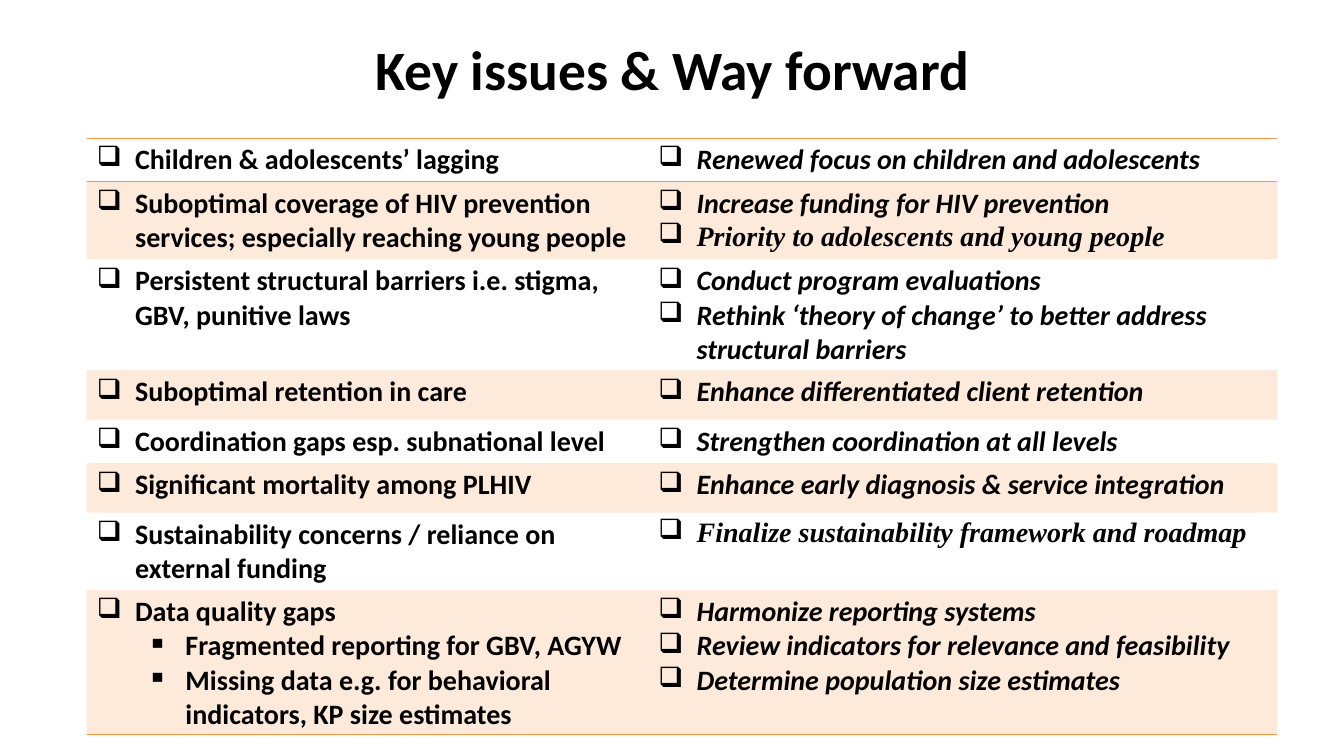
from lxml.etree import SubElement
from pptx import Presentation
from pptx.dml.color import RGBColor
from pptx.enum.text import MSO_ANCHOR, PP_ALIGN
from pptx.oxml.ns import qn
from pptx.util import Inches, Pt

BLACK = RGBColor(0x00, 0x00, 0x00)
ORANGE = RGBColor(0xF7, 0x96, 0x46)
BODY_FONT = "Calibri"
SERIF_FONT = "Times New Roman"
BAND_ALPHA = 20000

COLUMN_WIDTHS = [5.57, 6.24]
ROW_HEIGHTS = [0.42, 0.75, 1.08, 0.49, 0.42, 0.49, 0.75, 1.3]
# Bullet character and left indent in inches for each level
BULLETS = [("❑", 0.38), ("▪", 0.88)]
HANGING = 0.38

# Each row: issues as (text, level), actions as (text, font)
ROWS = [
    ([("Children & adolescents’ lagging", 0)],
     [("Renewed focus on children and adolescents", BODY_FONT)]),
    ([("Suboptimal coverage of HIV prevention services; especially reaching young people", 0)],
     [("Increase funding for HIV prevention", BODY_FONT),
      ("Priority to adolescents and young people", SERIF_FONT)]),
    ([("Persistent structural barriers i.e. stigma, GBV, punitive laws", 0)],
     [("Conduct program evaluations", BODY_FONT),
      ("Rethink ‘theory of change’ to better address structural barriers", BODY_FONT)]),
    ([("Suboptimal retention in care", 0)],
     [("Enhance differentiated client retention", BODY_FONT)]),
    ([("Coordination gaps esp. subnational level", 0)],
     [("Strengthen coordination at all levels", BODY_FONT)]),
    ([("Significant mortality among PLHIV", 0)],
     [("Enhance early diagnosis & service integration", BODY_FONT)]),
    ([("Sustainability concerns / reliance on external funding", 0)],
     [("Finalize sustainability framework and roadmap", SERIF_FONT)]),
    ([("Data quality gaps", 0),
      ("Fragmented reporting for GBV, AGYW", 1),
      ("Missing data e.g. for behavioral indicators, KP size estimates", 1)],
     [("Harmonize reporting systems", BODY_FONT),
      ("Review indicators for relevance and feasibility", BODY_FONT),
      ("Determine population size estimates", BODY_FONT)]),
]


def add_run(paragraph, text, size, font=BODY_FONT, italic=False):
    run = paragraph.add_run()
    run.text = text
    run.font.name = font
    run.font.size = Pt(size)
    run.font.bold = True
    run.font.italic = italic
    run.font.color.rgb = BLACK


def add_bullet(paragraph, level):
    character, indent = BULLETS[level]
    paragraph.level = level
    properties = paragraph._p.get_or_add_pPr()
    properties.set("marL", str(Inches(indent)))
    properties.set("indent", str(-Inches(HANGING)))
    SubElement(properties, qn("a:buChar"), char=character)


def fill_cell(cell, items):
    """Write (text, level, font, italic) items as bulleted paragraphs."""
    frame = cell.text_frame
    for index, (text, level, font, italic) in enumerate(items):
        paragraph = frame.add_paragraph() if index else frame.paragraphs[0]
        add_bullet(paragraph, level)
        add_run(paragraph, text, 20, font, italic)


def style_cell(cell, ruled_edges, banded):
    """Rule the named edges, clear the others, and tint banded cells."""
    properties = cell._tc.get_or_add_tcPr()
    for edge in ("lnL", "lnR", "lnT", "lnB"):
        line = SubElement(properties, qn(f"a:{edge}"), w=str(Pt(1)))
        if edge in ruled_edges:
            solid = SubElement(line, qn("a:solidFill"))
            SubElement(solid, qn("a:srgbClr"), val=str(ORANGE))
        else:
            SubElement(line, qn("a:noFill"))
    if banded:
        cell.fill.solid()
        cell.fill.fore_color.rgb = ORANGE
        color = properties.find(qn("a:solidFill")).find(qn("a:srgbClr"))
        SubElement(color, qn("a:alpha"), val=str(BAND_ALPHA))
    else:
        cell.fill.background()


def add_title(slide, left, top, width, height):
    box = slide.shapes.add_textbox(Inches(left), Inches(top), Inches(width), Inches(height))
    frame = box.text_frame
    frame.word_wrap = True
    frame.vertical_anchor = MSO_ANCHOR.MIDDLE
    paragraph = frame.paragraphs[0]
    paragraph.alignment = PP_ALIGN.CENTER
    add_run(paragraph, "Key issues & Way forward", 39.6)


def add_issues_table(slide, left, top):
    table = slide.shapes.add_table(
        len(ROWS), len(COLUMN_WIDTHS), Inches(left), Inches(top),
        Inches(sum(COLUMN_WIDTHS)), Inches(sum(ROW_HEIGHTS))).table
    table.first_row = False
    table.horz_banding = False
    for column, width in zip(table.columns, COLUMN_WIDTHS):
        column.width = Inches(width)
    edges = {0: ("lnT", "lnB"), 1: ("lnT",), len(ROWS) - 1: ("lnB",)}
    for index, (issues, actions) in enumerate(ROWS):
        table.rows[index].height = Inches(ROW_HEIGHTS[index])
        issue_items = [(text, level, BODY_FONT, False) for text, level in issues]
        action_items = [(text, 0, font, True) for text, font in actions]
        for column, items in enumerate((issue_items, action_items)):
            cell = table.cell(index, column)
            fill_cell(cell, items)
            style_cell(cell, edges.get(index, ()), banded=index % 2 == 1)


def main():
    presentation = Presentation()
    presentation.slide_width = Inches(13.33)
    presentation.slide_height = Inches(7.5)
    slide = presentation.slides.add_slide(presentation.slide_layouts[6])
    add_title(slide, 0.67, 0.3, 12, 0.75)
    add_issues_table(slide, 0.86, 1.37)
    presentation.save("out.pptx")


if __name__ == "__main__":
    main()
